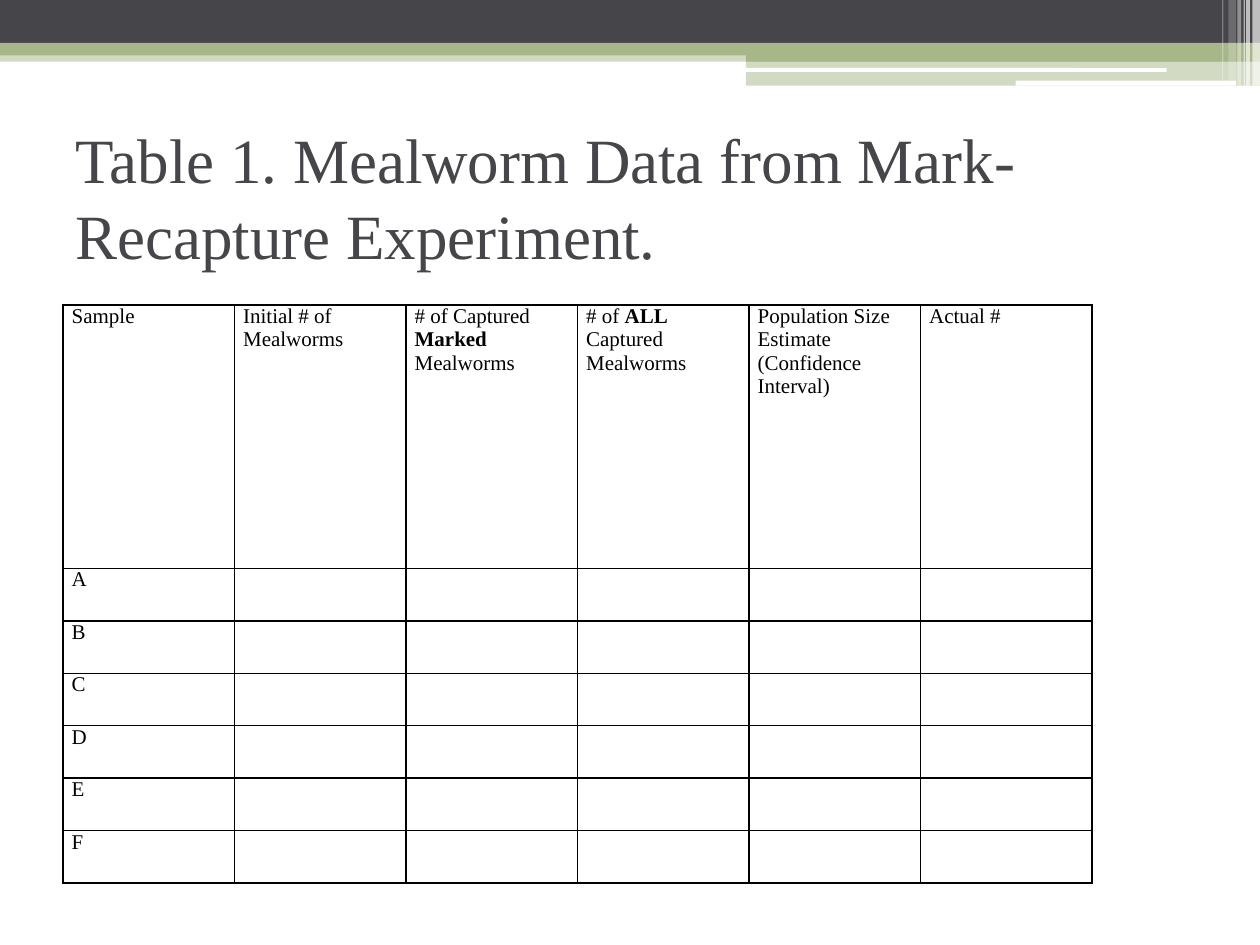
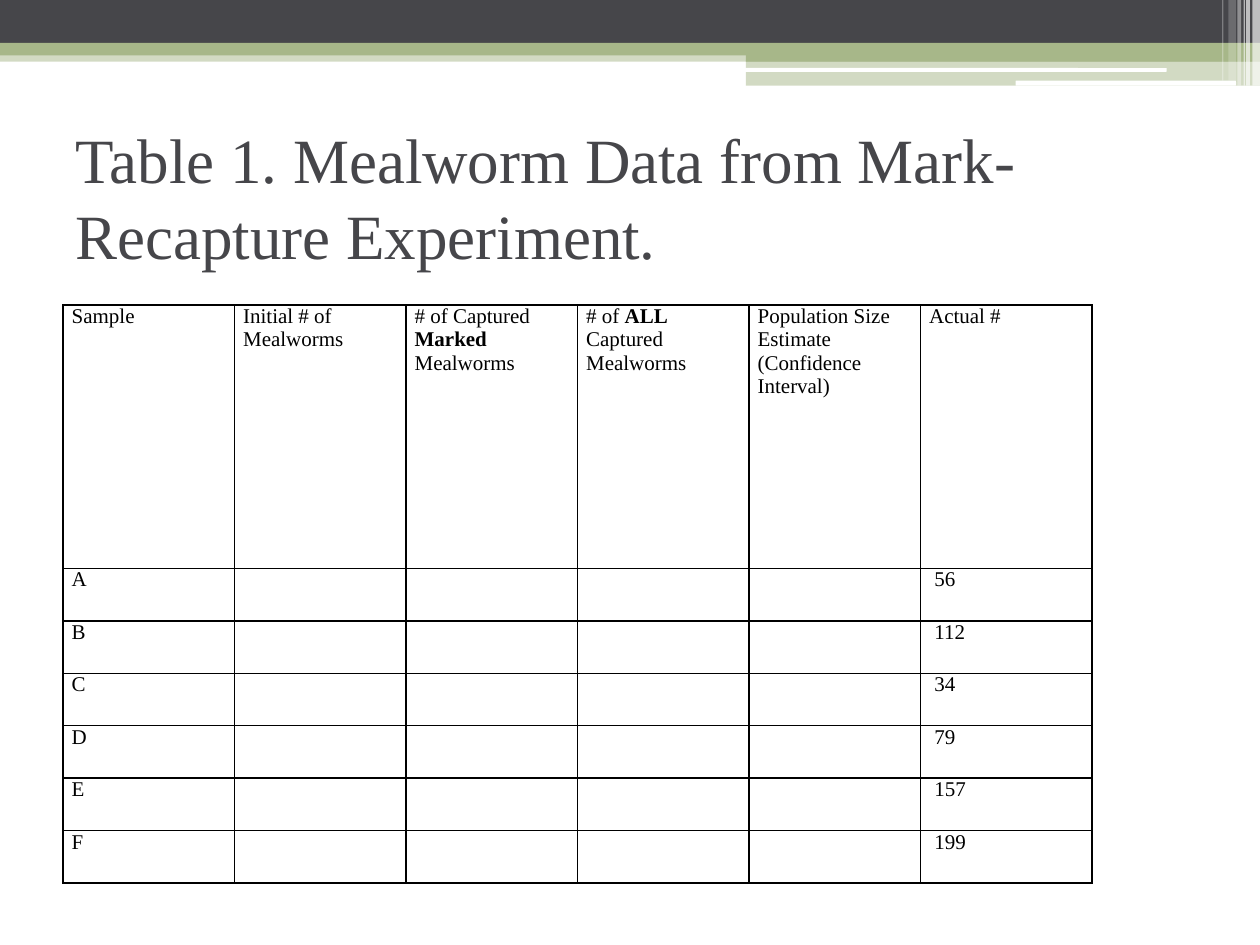
"""Build two mealworm mark-recapture table slides: one blank, one with the actual counts."""
import dataclasses
import typing

import lxml.etree
import pptx
import pptx.dml.color
import pptx.enum.shapes
import pptx.enum.text
import pptx.oxml.ns
import pptx.util

Pt = pptx.util.Pt
qn = pptx.oxml.ns.qn


@dataclasses.dataclass(frozen=True)
class Theme:
    """Colours, font and type sizes of the deck."""
    dark: str = "46464A"
    green: str = "A7B789"
    white: str = "FFFFFF"
    black: str = "000000"
    font: str = "Times New Roman"
    title_size: float = 36
    title_spacing: float = 43.4
    cell_size: float = 12
    border_width: float = 1


@dataclasses.dataclass(frozen=True)
class Band:
    """A filled bar of the page header, in points, with opacity in percent."""
    left: float
    top: float
    width: float
    height: float
    color: str
    opacity: int = 100
    rounded: bool = False


class Line(typing.NamedTuple):
    """One paragraph of a cell: plain text followed by bold text."""
    plain: str
    bold: str = ""


THEME = Theme()
SLIDE_WIDTH, SLIDE_HEIGHT = 720, 540
PANEL_LEFT = 426.24
PANEL_WIDTH = SLIDE_WIDTH - PANEL_LEFT

BANDS = [
    Band(0, 28.8, SLIDE_WIDTH, 6.48, THEME.green, 50),
    Band(0, 0, SLIDE_WIDTH, 24.48, THEME.dark),
    Band(0, 24.48, SLIDE_WIDTH, 7.2, THEME.green),
    Band(PANEL_LEFT, 28.08, PANEL_WIDTH, 7.2, THEME.green),
    Band(PANEL_LEFT, 34.56, PANEL_WIDTH, 14.4, THEME.green, 50),
    Band(425.52, 38.88, 241.2, 2.16, THEME.white, rounded=True),
    Band(580.32, 46.08, 126, 2.88, THEME.white, rounded=True),
] + [
    Band(left, 0, width, height, THEME.white, opacity)
    for left, width, height, opacity in [
        (715.68, 4.32, 48.96, 65),
        (712.08, 2.16, 48.96, 65),
        (710.64, 0.72, 48.96, 60),
        (707.04, 2.16, 48.96, 40),
        (702, 4.32, 46.08, 20),
        (698.4, 0.72, 46.08, 30),
    ]
]

TITLE = "Table 1. Mealworm Data from Mark-Recapture Experiment."
HEADERS = [
    [Line("Sample")],
    [Line("Initial # of Mealworms")],
    [Line("# of Captured"), Line("", "Marked"), Line("Mealworms")],
    [Line("# of ", "ALL"), Line("Captured"), Line("Mealworms")],
    [Line("Population Size Estimate (Confidence Interval)")],
    [Line("Actual #")],
]
SAMPLES = "ABCDEF"
ACTUAL_COUNTS = [56, 112, 34, 79, 157, 199]

TABLE_LEFT, TABLE_TOP = 36, 174.24
COLUMN_WIDTH, HEADER_HEIGHT, ROW_HEIGHT = 98, 150.5, 30
CELL_MARGIN, COUNT_MARGIN = 5, 8


def rgb(color: str) -> pptx.dml.color.RGBColor:
    """Turn a hex string into a colour."""
    return pptx.dml.color.RGBColor.from_string(color)


def style_runs(paragraph, size: float, color: str) -> None:
    """Give every run of a paragraph the deck font, a size and a colour."""
    for run in paragraph.runs:
        run.font.name = THEME.font
        run.font.size = Pt(size)
        run.font.color.rgb = rgb(color)


def draw_band(slide, band: Band):
    """Draw one header band on a slide and return it."""
    kinds = pptx.enum.shapes.MSO_SHAPE
    shape = slide.shapes.add_shape(
        kinds.ROUNDED_RECTANGLE if band.rounded else kinds.RECTANGLE,
        Pt(band.left), Pt(band.top), Pt(band.width), Pt(band.height))
    shape.shadow.inherit = False
    shape.fill.solid()
    shape.fill.fore_color.rgb = rgb(band.color)
    shape.line.fill.background()
    if band.opacity < 100:
        color = shape.element.spPr.find(".//" + qn("a:srgbClr"))
        lxml.etree.SubElement(color, qn("a:alpha"), val=str(band.opacity * 1000))
    return shape


def move_bands_to_layout(slide, layout) -> None:
    """Draw the header bands and place them behind everything on the layout."""
    for index, band in enumerate(BANDS):
        shape = draw_band(slide, band)
        shape.element.nvSpPr.cNvPr.set("id", str(100 + index))
        layout.shapes.element.insert(2 + index, shape.element)


def set_title(slide) -> None:
    """Place, fill and format the title placeholder."""
    title = slide.shapes.title
    title.left, title.top, title.width, title.height = Pt(36), Pt(90), Pt(648), Pt(84.24)
    frame = title.text_frame
    frame.text = TITLE
    frame.word_wrap = True
    frame.auto_size = pptx.enum.text.MSO_AUTO_SIZE.NONE
    frame.vertical_anchor = pptx.enum.text.MSO_ANCHOR.MIDDLE
    frame.margin_top, frame.margin_bottom = 0, Pt(40.6)
    paragraph = frame.paragraphs[0]
    paragraph.alignment = pptx.enum.text.PP_ALIGN.LEFT
    paragraph.line_spacing = Pt(THEME.title_spacing)
    style_runs(paragraph, THEME.title_size, THEME.dark)


def set_borders(cell) -> None:
    """Draw a solid line on all four sides of a cell."""
    properties = cell._tc.get_or_add_tcPr()
    for side in ("a:lnL", "a:lnR", "a:lnT", "a:lnB"):
        line = lxml.etree.SubElement(properties, qn(side), w=str(Pt(THEME.border_width)))
        fill = lxml.etree.SubElement(line, qn("a:solidFill"))
        lxml.etree.SubElement(fill, qn("a:srgbClr"), val=THEME.black)


def fill_cell(cell, lines: list[Line], left_margin: float = CELL_MARGIN) -> None:
    """Format a cell and write its lines."""
    set_borders(cell)
    cell.fill.background()
    cell.margin_left, cell.margin_right = Pt(left_margin), Pt(CELL_MARGIN)
    cell.margin_top = cell.margin_bottom = 0
    frame = cell.text_frame
    for index, line in enumerate(lines):
        paragraph = frame.add_paragraph() if index else frame.paragraphs[0]
        paragraph.text = line.plain
        if line.bold:
            run = paragraph.add_run()
            run.text = line.bold
            run.font.bold = True
        style_runs(paragraph, THEME.cell_size, THEME.black)


def add_data_table(slide, counts: list[int]) -> None:
    """Add the sample table, with actual counts where they are given."""
    row_count, column_count = len(SAMPLES) + 1, len(HEADERS)
    table = slide.shapes.add_table(
        row_count, column_count, Pt(TABLE_LEFT), Pt(TABLE_TOP),
        Pt(COLUMN_WIDTH * column_count),
        Pt(HEADER_HEIGHT + ROW_HEIGHT * len(SAMPLES))).table
    table.first_row = table.horz_banding = False
    for column in table.columns:
        column.width = Pt(COLUMN_WIDTH)
    for index, row in enumerate(table.rows):
        row.height = Pt(ROW_HEIGHT if index else HEADER_HEIGHT)
    for column, lines in enumerate(HEADERS):
        fill_cell(table.cell(0, column), lines)
    for row, sample in enumerate(SAMPLES, start=1):
        fill_cell(table.cell(row, 0), [Line(sample)])
        for column in range(1, column_count - 1):
            fill_cell(table.cell(row, column), [])
        count = [Line(str(counts[row - 1]))] if counts else []
        fill_cell(table.cell(row, column_count - 1), count, COUNT_MARGIN)


def main() -> None:
    """Build and save the presentation."""
    presentation = pptx.Presentation()
    presentation.slide_width = Pt(SLIDE_WIDTH)
    presentation.slide_height = Pt(SLIDE_HEIGHT)
    layout = presentation.slide_layouts.get_by_name("Title Only")
    for counts in ([], ACTUAL_COUNTS):
        slide = presentation.slides.add_slide(layout)
        set_title(slide)
        add_data_table(slide, counts)
    move_bands_to_layout(presentation.slides[0], layout)
    presentation.save("out.pptx")


if __name__ == "__main__":
    main()
